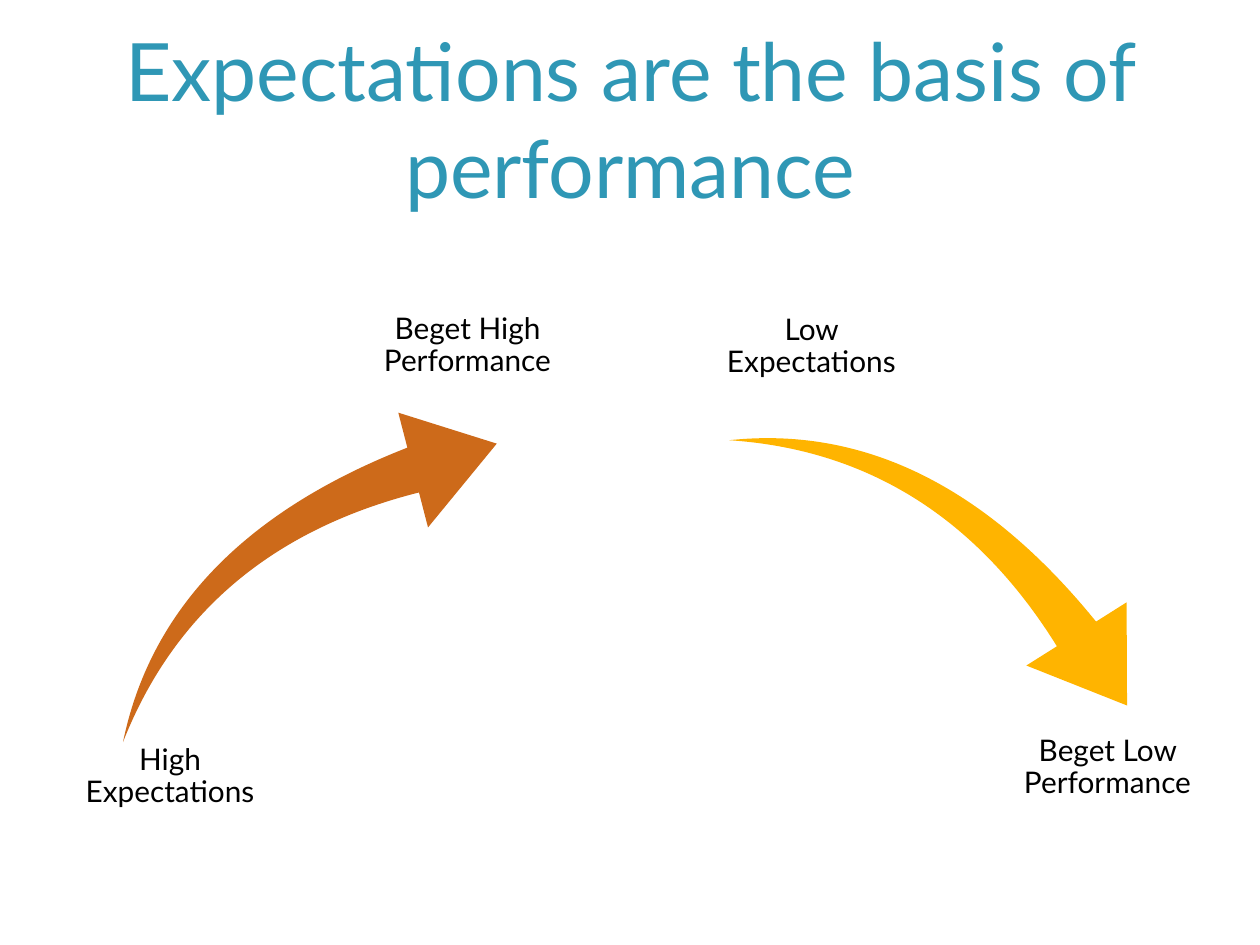
from pptx import Presentation
from pptx import util as u
from pptx.dml.color import RGBColor
from pptx.enum import shapes, text


def color(value):
    return RGBColor.from_string(value)


class Deck:
    FONT = "Lato"
    TITLE_COLOR = "2F97B5"
    TEXT_COLOR = "000000"

    def __init__(self, prs):
        self.s = prs.slides.add_slide(prs.slide_layouts[5])

    def set_text(self, sp, wording, size, hue, anchor):
        tf = sp.text_frame
        tf.text = wording
        tf.word_wrap = True
        tf.auto_size = text.MSO_AUTO_SIZE.NONE
        tf.vertical_anchor = anchor
        p = tf.paragraphs[0]
        p.alignment = text.PP_ALIGN.CENTER
        p.font.name = self.FONT
        p.font.size = u.Pt(size)
        p.font.color.rgb = color(hue)
        return tf

    def title(self, wording, *box):
        sp = self.s.shapes.title
        sp.left, sp.top, sp.width, sp.height = map(u.Inches, box)
        self.set_text(sp, wording, 46, self.TITLE_COLOR, text.MSO_ANCHOR.BOTTOM)

    def label(self, wording, left, top, width, anchor):
        sp = self.s.shapes.add_textbox(*map(u.Inches, (left, top, width, 0.61)))
        tf = self.set_text(sp, wording, 17, self.TEXT_COLOR, anchor)
        tf.margin_left = tf.margin_right = u.Inches(0.02)
        tf.margin_top = tf.margin_bottom = u.Inches(0.02)
        tf.paragraphs[0].line_spacing = 0.9

    def cause(self, wording, left, top):
        self.label(wording, left, top, 1.54, text.MSO_ANCHOR.BOTTOM)

    def effect(self, wording, left, top):
        self.label(wording, left, top, 2.08, text.MSO_ANCHOR.TOP)

    def swoosh(self, left, top, rotation, fill):
        sp = self.s.shapes.add_shape(
            shapes.MSO_SHAPE.SWOOSH_ARROW,
            *map(u.Inches, (left, top, 3.27, 2.28)))
        sp.adjustments[0] = 0.16
        sp.adjustments[1] = 0.31
        sp.rotation = rotation
        sp.shadow.inherit = False
        sp.fill.solid()
        sp.fill.fore_color.rgb = color(fill)
        sp.line.fill.background()


def main():
    prs = Presentation()
    prs.slide_width, prs.slide_height = u.Inches(10), u.Inches(7.5)
    deck = Deck(prs)
    deck.title("Expectations are the basis of performance", 0.6, 0.29, 8.8, 1.46)

    deck.swoosh(5.89, 3.33, 64.2, "FFB400")
    deck.cause("Low Expectations", 5.67, 2.42)
    deck.effect("Beget Low Performance", 7.75, 5.82)

    deck.swoosh(0.8, 3.39, 351.9, "CD6A1A")
    deck.cause("High Expectations", 0.58, 5.83)
    deck.effect("Beget High Performance", 2.67, 2.47)
    prs.save("out.pptx")


if __name__ == "__main__":
    main()
